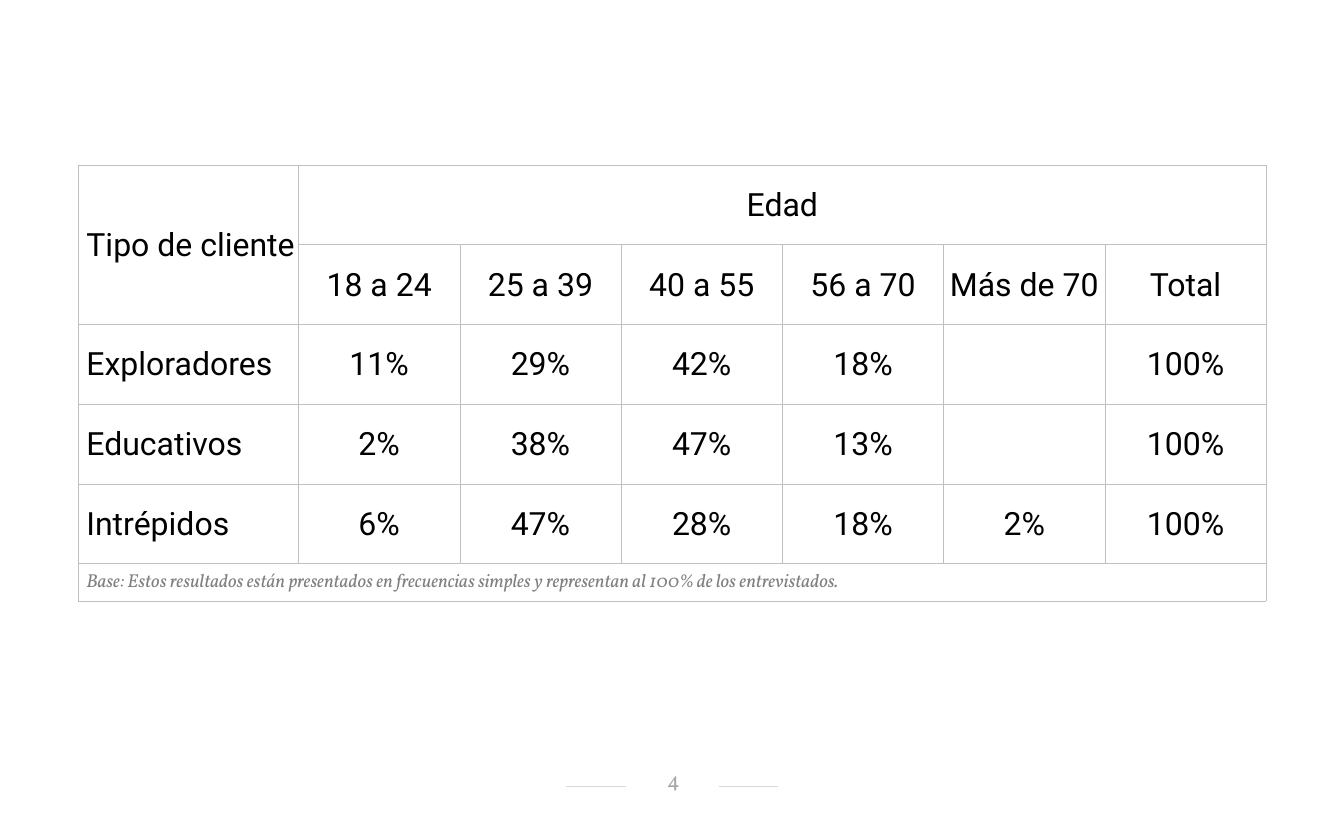
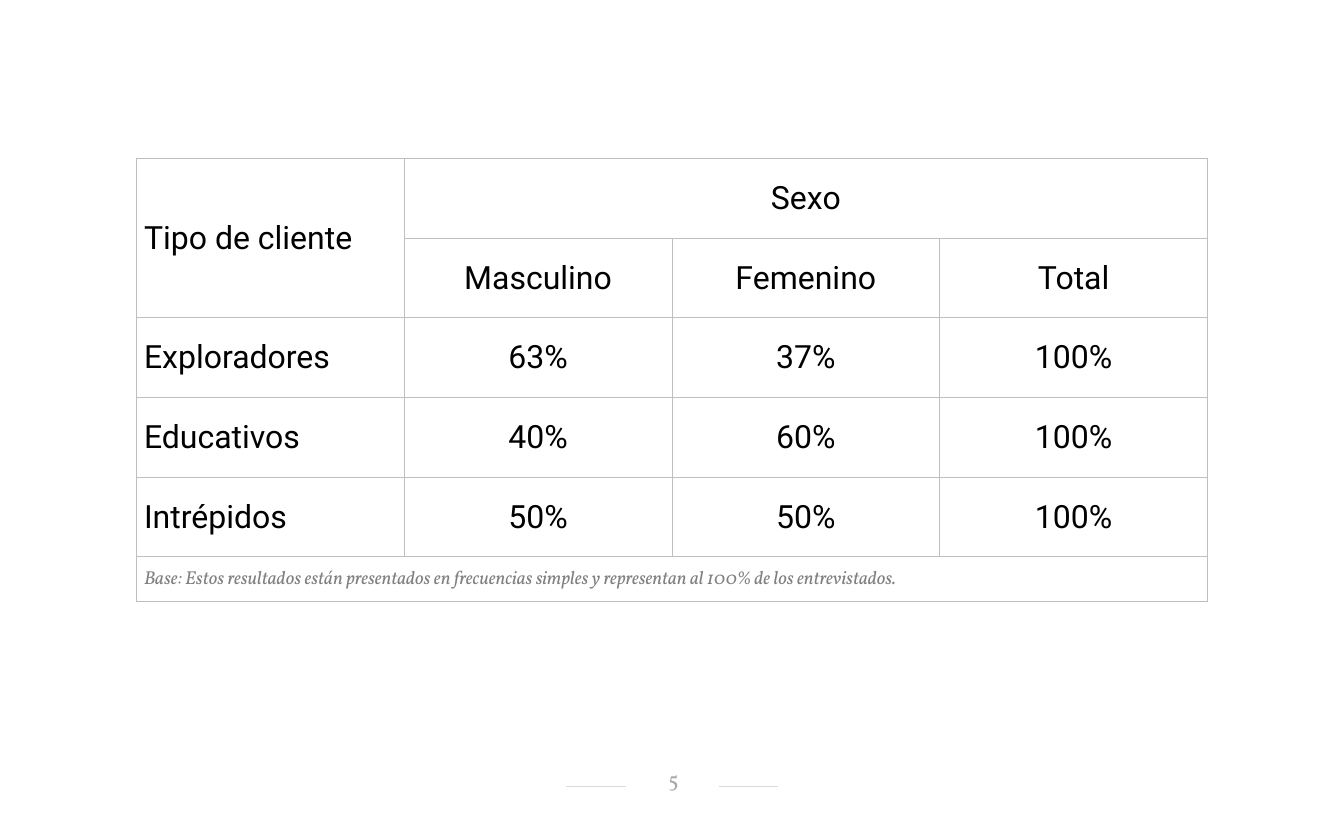
from dataclasses import dataclass

from lxml.etree import SubElement
from pptx import Presentation
from pptx.dml.color import RGBColor
from pptx.enum.shapes import MSO_CONNECTOR
from pptx.enum.text import MSO_ANCHOR, PP_ALIGN
from pptx.oxml import parse_xml
from pptx.oxml.ns import nsdecls, qn
from pptx.util import Inches, Pt


@dataclass(frozen=True)
class Theme:
    heading_font: str = "Roboto"
    note_font: str = "Vollkorn"
    ink: str = "000000"
    note: str = "808080"
    page: str = "A6A6A6"
    border: str = "BFBFBF"
    rule: str = "D9D9D9"
    paper: str = "FFFFFF"
    table_size: int = 24
    note_size: int = 14
    page_size: int = 16
    hairline: float = 0.5


BASE_NOTE = ("Base: Estos resultados están presentados en frecuencias simples "
             "y representan al 100% de los entrevistados.")
ROW_HEIGHT = 0.83


def write(frame, text, font, size, color, align=PP_ALIGN.LEFT, italic=False):
    paragraph = frame.paragraphs[0]
    paragraph.alignment = align
    run = paragraph.add_run()
    run.text = text
    run.font.name = font
    run.font.size = Pt(size)
    run.font.italic = italic
    run.font.color.rgb = RGBColor.from_string(color)


def set_margins(target, left, top, right, bottom):
    target.margin_left = Inches(left)
    target.margin_top = Inches(top)
    target.margin_right = Inches(right)
    target.margin_bottom = Inches(bottom)


class Deck:
    def __init__(self, theme):
        self.theme = theme
        self.presentation = Presentation()
        self.presentation.slide_width = Inches(14)
        self.presentation.slide_height = Inches(8.5)
        self.slide = None

    def new_slide(self, page):
        blank = self.presentation.slide_layouts[6]
        self.slide = self.presentation.slides.add_slide(blank)
        background = self.slide.background.fill
        background.solid()
        background.fore_color.rgb = RGBColor.from_string(self.theme.paper)
        for start, end in ((5.9, 6.52), (7.49, 8.1)):
            self.rule(start, end, 8.19)
        self.page_number(page)

    def rule(self, start, end, y):
        rule = self.slide.shapes.add_connector(
            MSO_CONNECTOR.STRAIGHT, Inches(start), Inches(y), Inches(end), Inches(y))
        rule.line.color.rgb = RGBColor.from_string(self.theme.rule)
        rule.line.width = Pt(self.theme.hairline)
        SubElement(rule.element.spPr, qn("a:effectLst"))

    def page_number(self, page):
        frame = self.slide.shapes.add_textbox(
            Inches(6.51), Inches(7.98), Inches(0.99), Inches(0.29)).text_frame
        frame.word_wrap = True
        frame.vertical_anchor = MSO_ANCHOR.MIDDLE
        set_margins(frame, 0.12, 0.02, 0.1, 0.05)
        write(frame, str(page), font=self.theme.note_font, size=self.theme.page_size,
              color=self.theme.page, align=PP_ALIGN.CENTER)

    def style_cell(self, cell, left_margin):
        cell.fill.background()
        cell.vertical_anchor = MSO_ANCHOR.MIDDLE
        set_margins(cell, left_margin, 0.01, 0.01, 0)
        properties = cell._tc.get_or_add_tcPr()
        for position, side in enumerate(("lnL", "lnR", "lnT", "lnB")):
            properties.insert(position, parse_xml(
                f'<a:{side} {nsdecls("a")} w="{Pt(self.theme.hairline)}"><a:solidFill>'
                f'<a:srgbClr val="{self.theme.border}"/></a:solidFill></a:{side}>'))

    def crosstab(self, left, top, widths, note_height, topic, groups, results):
        rows = [["Tipo de cliente", topic], ["", *groups]]
        rows += [[client, *shares] for client, shares in results.items()]
        rows.append([BASE_NOTE])
        heights = [ROW_HEIGHT] * (len(rows) - 1) + [note_height]
        last_row, last_column = len(rows) - 1, len(widths) - 1

        table = self.slide.shapes.add_table(
            len(rows), len(widths), Inches(left), Inches(top),
            Inches(sum(widths)), Inches(sum(heights))).table
        table.first_row = table.horz_banding = False
        for column, width in zip(table.columns, widths):
            column.width = Inches(width)
        for row, height in zip(table.rows, heights):
            row.height = Inches(height)
        for r in range(len(rows)):
            for c in range(len(widths)):
                self.style_cell(table.cell(r, c), 0.01 if c else 0.08)

        table.cell(0, 0).merge(table.cell(1, 0))
        table.cell(0, 1).merge(table.cell(0, last_column))
        table.cell(last_row, 0).merge(table.cell(last_row, last_column))

        body = dict(font=self.theme.heading_font, size=self.theme.table_size,
                    color=self.theme.ink)
        note = dict(font=self.theme.note_font, size=self.theme.note_size,
                    color=self.theme.note, italic=True)
        for r, texts in enumerate(rows):
            for c, text in enumerate(texts):
                if text:
                    write(table.cell(r, c).text_frame, text,
                          align=PP_ALIGN.CENTER if c else PP_ALIGN.LEFT,
                          **(note if r == last_row else body))


def main():
    deck = Deck(Theme())

    deck.new_slide(4)
    deck.crosstab(
        0.82, 1.72, [2.29] + [1.68] * 6, 0.39, "Edad",
        ["18 a 24", "25 a 39", "40 a 55", "56 a 70", "Más de 70", "Total"],
        {"Exploradores": ["11%", "29%", "42%", "18%", "", "100%"],
         "Educativos": ["2%", "38%", "47%", "13%", "", "100%"],
         "Intrépidos": ["6%", "47%", "28%", "18%", "2%", "100%"]})

    deck.new_slide(5)
    deck.crosstab(
        1.42, 1.65, [2.79] * 4, 0.46, "Sexo",
        ["Masculino", "Femenino", "Total"],
        {"Exploradores": ["63%", "37%", "100%"],
         "Educativos": ["40%", "60%", "100%"],
         "Intrépidos": ["50%", "50%", "100%"]})

    deck.presentation.save("out.pptx")


if __name__ == "__main__":
    main()
